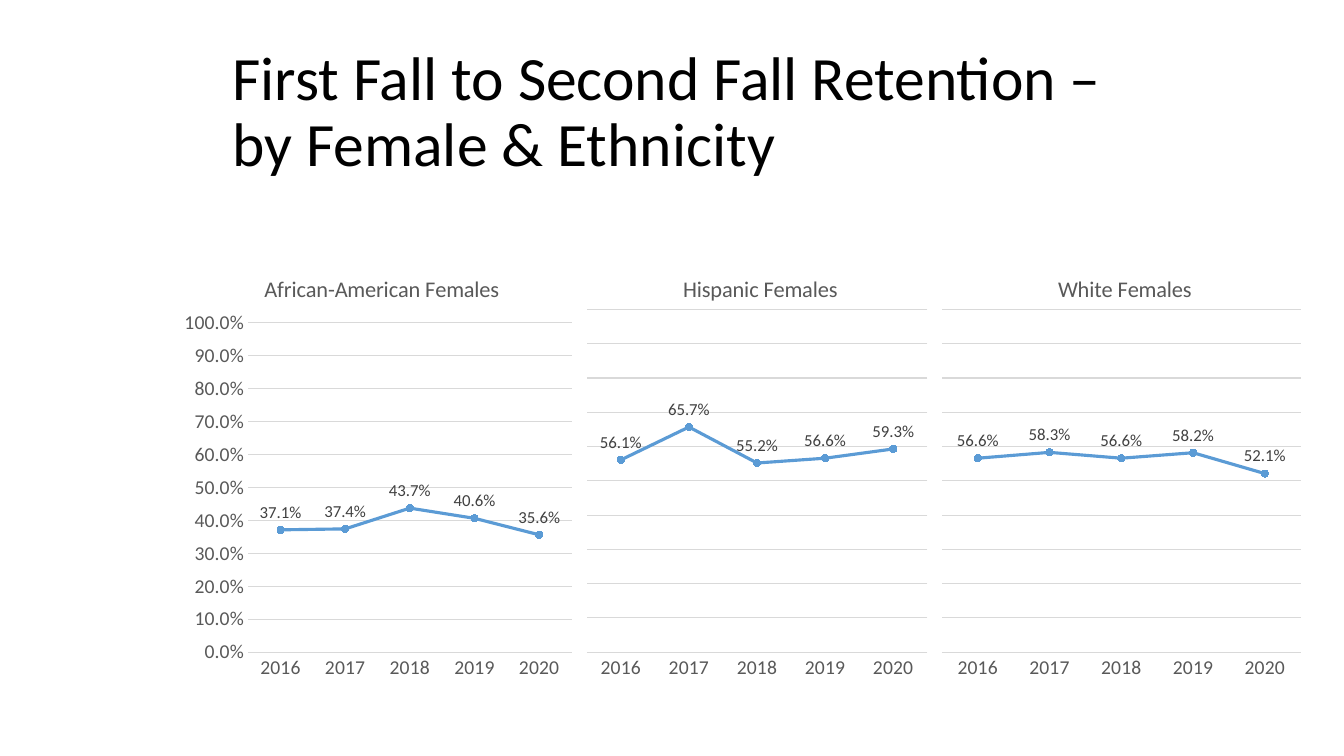
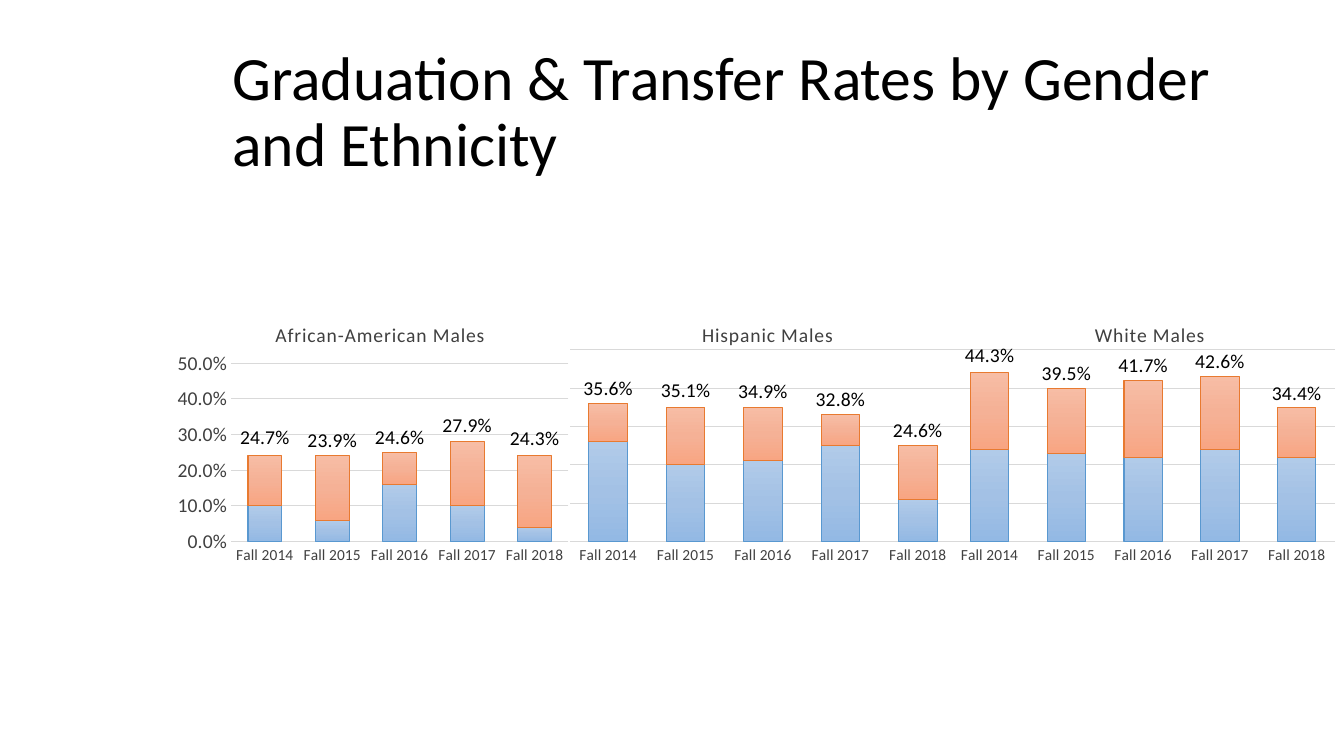
import copy
from dataclasses import dataclass

import lxml.etree
import pptx
import pptx.chart.data
import pptx.dml.color
import pptx.enum.chart
import pptx.enum.text
import pptx.oxml.ns
import pptx.util

Cm = pptx.util.Cm
Pt = pptx.util.Pt
RGBColor = pptx.dml.color.RGBColor
qn = pptx.oxml.ns.qn
XL = pptx.enum.chart

FONT = "Calibri"
BLACK = RGBColor(0x00, 0x00, 0x00)
DARK = RGBColor(0x40, 0x40, 0x40)
GREY = RGBColor(0x59, 0x59, 0x59)
GRID = RGBColor(0xD9, 0xD9, 0xD9)
BLUE = RGBColor(0x5B, 0x9B, 0xD5)
BLUE_EDGE = RGBColor(0x59, 0x98, 0xD0)
ORANGE_EDGE = RGBColor(0xE8, 0x7A, 0x30)
BLUE_STOPS = (RGBColor(0xB1, 0xCB, 0xE9), RGBColor(0xA3, 0xC1, 0xE5),
              RGBColor(0x93, 0xB9, 0xE4))
ORANGE_STOPS = (RGBColor(0xF7, 0xBD, 0xA5), RGBColor(0xF5, 0xB1, 0x96),
                RGBColor(0xF8, 0xA5, 0x82))

PERCENT = "0.0%"
YEARS = [str(year) for year in range(2016, 2021)]
COHORTS = [f"Fall {year}" for year in range(2014, 2019)]


@dataclass
class Panel:
    """One chart: left and width in cm, the rest as fractions of the chart."""
    title: str
    left: float
    width: float
    title_x: float
    plot_x: float
    plot_y: float
    series: list


@dataclass
class Row:
    """What the charts side by side on one slide share."""
    top: float
    height: float
    kind: object
    categories: list
    title_y: float
    title_size: int
    title_spacing: int
    plot_bottom: float
    color: RGBColor
    category_size: int
    maximum: float


RETENTION = Row(6.25, 11.07, XL.XL_CHART_TYPE.LINE_MARKERS, YEARS,
                0.05, 16, 0, 0.92, GREY, 14, 1)
RETENTION_PANELS = [
    Panel("African-American Females", 4.42, 10.19, 0.21, 0.18, 0.17,
          [[0.371, 0.374, 0.437, 0.406, 0.356]]),
    Panel("Hispanic Females", 14.61, 8.94, 0.28, 0.02, 0.14,
          [[0.561, 0.657, 0.552, 0.566, 0.593]]),
    Panel("White Females", 23.55, 9.42, 0.32, 0.02, 0.14,
          [[0.566, 0.583, 0.566, 0.582, 0.521]]),
]

GRADUATION = Row(7.52, 6.81, XL.XL_CHART_TYPE.COLUMN_STACKED, COHORTS,
                 0.07, 14, 50, 0.9, DARK, 11, 0.5)
GRADUATION_PANELS = [
    Panel("African-American Males", 4.29, 10.24, 0.25, 0.15, 0.24,
          [[0.1, 0.06, 0.16, 0.1, 0.04],
           [0.14, 0.18, 0.09, 0.18, 0.2],
           [0.247, 0.239, 0.246, 0.279, 0.243]]),
    Panel("Hispanic Males", 14.15, 10.16, 0.34, 0.02, 0.19,
          [[0.26, 0.2, 0.21, 0.25, 0.11],
           [0.1, 0.15, 0.14, 0.08, 0.14],
           [0.356, 0.351, 0.349, 0.328, 0.246]]),
    Panel("White Males", 23.77, 10.08, 0.37, 0.02, 0.19,
          [[0.24, 0.23, 0.22, 0.24, 0.22],
           [0.2, 0.17, 0.2, 0.19, 0.13],
           [0.443, 0.395, 0.417, 0.426, 0.344]]),
]


def set_font(font, size, color):
    font.name = FONT
    font.size = Pt(size)
    font.bold = False
    font.color.rgb = color


def set_line(line, color, width):
    line.color.rgb = color
    line.width = Pt(width)


def add_child(parent, tag, val=None):
    child = lxml.etree.SubElement(parent, qn(tag))
    if val is not None:
        child.set("val", str(val))
    return child


def add_slide(prs, *title_lines):
    s = prs.slides.add_slide(prs.slide_layouts[6])
    sp = s.shapes.add_textbox(Cm(5.61), Cm(1.02), Cm(25.93), Cm(3.68))
    tf = sp.text_frame
    tf.word_wrap = True
    tf.vertical_anchor = pptx.enum.text.MSO_ANCHOR.MIDDLE
    p = tf.paragraphs[0]
    p.line_spacing = 0.9
    for i, line in enumerate(title_lines):
        if i:
            p.add_line_break()
        r = p.add_run()
        r.text = line
        set_font(r.font, 44, BLACK)
    return s


def make_layout(x, y, size=None):
    """Build a manual chart layout; a size makes it the inner plot area."""
    layout = lxml.etree.Element(qn("c:layout"))
    manual = add_child(layout, "c:manualLayout")
    if size:
        add_child(manual, "c:layoutTarget", "inner")
    add_child(manual, "c:xMode", "edge")
    add_child(manual, "c:yMode", "edge")
    add_child(manual, "c:x", x)
    add_child(manual, "c:y", y)
    if size:
        add_child(manual, "c:w", round(size[0], 2))
        add_child(manual, "c:h", round(size[1], 2))
    return layout


def drop_layout(parent):
    for old in parent.findall(qn("c:layout")):
        parent.remove(old)


def place_plot(chart, row, panel):
    area = chart._chartSpace.find(".//" + qn("c:plotArea"))
    drop_layout(area)
    size = (0.98 - panel.plot_x, row.plot_bottom - panel.plot_y)
    area.insert(0, make_layout(panel.plot_x, panel.plot_y, size))


def set_title(chart, row, panel):
    chart.has_title = True
    title = chart.chart_title
    r = title.text_frame.paragraphs[0].add_run()
    r.text = panel.title
    set_font(r.font, row.title_size, row.color)
    if row.title_spacing:
        r.font._element.set("spc", str(row.title_spacing))
    drop_layout(title._element)
    title._element.find(qn("c:tx")).addnext(
        make_layout(panel.title_x, row.title_y))


def style_axes(chart, row, show_values):
    for axis, size in ((chart.category_axis, row.category_size),
                       (chart.value_axis, 14)):
        axis.major_tick_mark = XL.XL_TICK_MARK.NONE
        axis.minor_tick_mark = XL.XL_TICK_MARK.NONE
        set_font(axis.tick_labels.font, size, row.color)
    set_line(chart.category_axis.format.line, GRID, 0.75)
    values = chart.value_axis
    values.minimum_scale = 0
    values.maximum_scale = row.maximum
    values.major_unit = 0.1
    values.has_major_gridlines = True
    set_line(values.major_gridlines.format.line, GRID, 0.75)
    values.format.line.fill.background()
    values.tick_labels.number_format = PERCENT
    values.tick_labels.number_format_is_linked = False
    values.visible = show_values


def label_above(series, size, color):
    labels = series.data_labels
    labels.show_value = True
    labels.position = XL.XL_LABEL_POSITION.ABOVE
    labels.number_format = PERCENT
    labels.number_format_is_linked = False
    set_font(labels.font, size, color)


def style_trend(chart):
    series = chart.plots[0].series[0]
    series.smooth = False
    set_line(series.format.line, BLUE, 2.25)
    marker = series.marker
    marker.style = XL.XL_MARKER_STYLE.CIRCLE
    marker.size = 5
    marker.format.fill.solid()
    marker.format.fill.fore_color.rgb = BLUE
    set_line(marker.format.line, BLUE, 0.75)
    label_above(series, 12, DARK)


def fill_gradient(series, colors):
    fill = series.format.fill
    fill.gradient()
    fill.gradient_angle = 270
    stop_list = series._element.find(".//" + qn("a:gsLst"))
    stop_list.append(copy.deepcopy(stop_list[0]))
    for stop, position, color in zip(fill.gradient_stops, (0, 0.5, 1), colors):
        stop.position = position
        stop.color.rgb = color


def move_last_series_to_line(chart):
    bars = chart._chartSpace.find(".//" + qn("c:barChart"))
    ser = bars.findall(qn("c:ser"))[-1]
    for invert in ser.findall(qn("c:invertIfNegative")):
        ser.remove(invert)
    line = lxml.etree.Element(qn("c:lineChart"))
    bars.addnext(line)
    add_child(line, "c:grouping", "standard")
    add_child(line, "c:varyColors", 0)
    line.append(ser)
    add_child(line, "c:marker", 1)
    for axis_id in bars.findall(qn("c:axId")):
        line.append(copy.deepcopy(axis_id))


def style_stack(chart):
    """Gradient columns, with totals as labels on an unseen line."""
    move_last_series_to_line(chart)
    columns, totals = chart.plots
    columns.gap_width = 100
    columns.overlap = 100
    looks = ((BLUE_STOPS, BLUE_EDGE), (ORANGE_STOPS, ORANGE_EDGE))
    for series, (stops, edge) in zip(columns.series, looks):
        fill_gradient(series, stops)
        set_line(series.format.line, edge, 0.75)
    total = totals.series[0]
    total.smooth = False
    total.format.line.fill.background()
    total.marker.style = XL.XL_MARKER_STYLE.NONE
    label_above(total, 14, BLACK)


def add_panels(s, row, panels, style_series):
    for i, panel in enumerate(panels):
        data = pptx.chart.data.CategoryChartData(number_format=PERCENT)
        data.categories = row.categories
        for n, values in enumerate(panel.series, 1):
            data.add_series(f"Series {n}", values)
        chart = s.shapes.add_chart(
            row.kind, Cm(panel.left), Cm(row.top), Cm(panel.width),
            Cm(row.height), data).chart
        set_font(chart.font, 10, BLACK)
        chart.has_legend = False
        chart.plots[0].vary_by_categories = False
        set_title(chart, row, panel)
        style_axes(chart, row, show_values=i == 0)
        style_series(chart)
        place_plot(chart, row, panel)


def main():
    prs = pptx.Presentation()
    prs.slide_width = Cm(33.87)
    prs.slide_height = Cm(19.05)
    s = add_slide(prs, "First Fall to Second Fall Retention –",
                  "by Female & Ethnicity")
    add_panels(s, RETENTION, RETENTION_PANELS, style_trend)
    s = add_slide(prs, "Graduation & Transfer Rates by Gender and Ethnicity")
    add_panels(s, GRADUATION, GRADUATION_PANELS, style_stack)
    prs.save("out.pptx")


if __name__ == "__main__":
    main()
